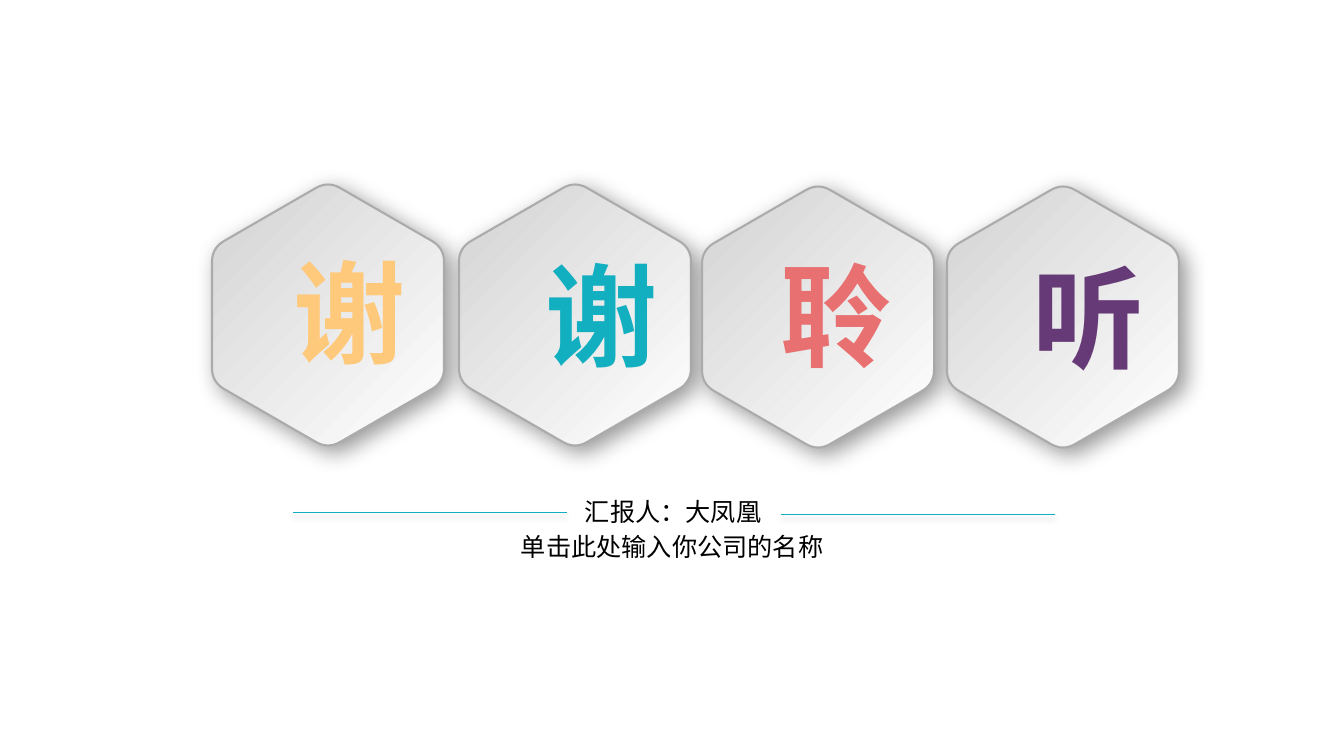
from math import cos, radians, sin

from lxml.etree import SubElement
from pptx import Presentation
from pptx.dml.color import RGBColor
from pptx.enum.shapes import MSO_CONNECTOR
from pptx.enum.text import MSO_AUTO_SIZE, PP_ALIGN
from pptx.oxml.ns import qn
from pptx.util import Pt

EMU_PER_PX = 914400 / 100.8
FONT = "Noto Sans CJK SC"
COLORS = {
    "white": "FFFFFF",
    "silver": "D3D3D3",
    "edge": "ABABAB",
    "black": "000000",
    "yellow": "FFC97B",
    "teal": "12AFC0",
    "coral": "E87071",
    "purple": "663A77",
}
HEXAGON_RADIUS = 134
CORNER_CUT = 14


def px(length):
    return round(length * EMU_PER_PX)


def color(name):
    return RGBColor.from_string(COLORS[name])


def add_shadow(shape, blur, distance, angle):
    effects = SubElement(shape._element.spPr, qn("a:effectLst"))
    shadow = SubElement(effects, qn("a:outerShdw"), blurRad=str(Pt(blur)),
                        dist=str(Pt(distance)), dir=str(angle * 60000),
                        algn="ctr", rotWithShape="0")
    tint = SubElement(shadow, qn("a:srgbClr"), val=COLORS["black"])
    SubElement(tint, qn("a:alpha"), val="40000")


def add_text(slide, box, text, size, color_name, bold=False, align=PP_ALIGN.LEFT):
    shape = slide.shapes.add_textbox(*map(px, box))
    frame = shape.text_frame
    frame.word_wrap = True
    frame.auto_size = MSO_AUTO_SIZE.SHAPE_TO_FIT_TEXT
    paragraph = frame.paragraphs[0]
    paragraph.alignment = align
    run = paragraph.add_run()
    run.text = text
    run.font.size = Pt(size)
    run.font.bold = bold
    run.font.name = FONT
    run.font.color.rgb = color(color_name)
    SubElement(run._r.get_or_add_rPr(), qn("a:ea"), typeface=FONT)


def corner_points(center_x, center_y):
    corners = [(center_x + HEXAGON_RADIUS * cos(radians(angle)),
                center_y + HEXAGON_RADIUS * sin(radians(angle)))
               for angle in range(0, 360, 60)]
    cut = CORNER_CUT / HEXAGON_RADIUS
    points = []
    for index, corner in enumerate(corners):
        entry, leave = [
            tuple(c + cut * (n - c) for c, n in zip(corner, neighbour))
            for neighbour in (corners[index - 1], corners[(index + 1) % 6])]
        apex = tuple((e + 2 * c + v) / 4 for e, c, v in zip(entry, corner, leave))
        points += [entry, apex, leave]
    return [(px(x), px(y)) for x, y in points]


def round_corners(shape):
    path = next(shape._element.iter(qn("a:path")))
    steps = list(path)
    for index in range(0, 18, 3):
        entry, apex, leave = [
            (int(step[0].get("x")), int(step[0].get("y")))
            for step in steps[index:index + 3]]
        control = [2 * a - (e + v) / 2 for e, a, v in zip(entry, apex, leave)]
        curve = SubElement(path, qn("a:cubicBezTo"))
        for end in (entry, leave):
            x, y = [round((e + 2 * c) / 3) for e, c in zip(end, control)]
            SubElement(curve, qn("a:pt"), x=str(x), y=str(y))
        SubElement(curve, qn("a:pt"), x=str(leave[0]), y=str(leave[1]))
        path.replace(steps[index + 1], curve)
        path.remove(steps[index + 2])


def add_hexagon(slide, center_x, center_y):
    start, *others = corner_points(center_x, center_y)
    builder = slide.shapes.build_freeform(*start)
    builder.add_line_segments(others, close=True)
    hexagon = builder.convert_to_shape()
    round_corners(hexagon)
    hexagon.rotation = 90
    hexagon.fill.gradient()
    hexagon.fill.gradient_angle = 225
    for stop, name in zip(hexagon.fill.gradient_stops, ("white", "silver")):
        stop.color.rgb = color(name)
    hexagon.line.color.rgb = color("edge")
    hexagon.line.width = Pt(1.5)
    add_shadow(hexagon, 16, 6, 45)


def add_thanks(slide):
    tiles = [
        ("谢", "yellow", 328, 315, (284, 239, 85, 154)),
        ("谢", "teal", 575, 315, (536, 242, 85, 154)),
        ("聆", "coral", 818, 317, (771, 242, 105, 154)),
        ("听", "purple", 1063, 317, (1023, 244, 85, 154)),
    ]
    for character, color_name, center_x, center_y, box in tiles:
        add_hexagon(slide, center_x, center_y)
        add_text(slide, box, character, 80, color_name, True, PP_ALIGN.CENTER)


def add_rule(slide, left, top, width):
    rule = slide.shapes.add_connector(
        MSO_CONNECTOR.STRAIGHT, px(left), px(top), px(left + width), px(top))
    rule.line.color.rgb = color("teal")
    rule.line.width = Pt(0.5)
    add_shadow(rule, 4, 3, 90)


def add_signature(slide, left, top):
    add_rule(slide, left, top + 21, 274)
    add_rule(slide, left + 488, top + 23, 274)
    add_text(slide, (left + 282, top, 199, 40), "汇报人：大凤凰", 18, "black")
    add_text(slide, (left + 218, top + 35, 326, 42),
             "单击此处输入你公司的名称", 18, "black")


def main():
    presentation = Presentation()
    presentation.slide_width = px(1344)
    presentation.slide_height = px(756)
    slide = presentation.slides.add_slide(presentation.slide_layouts[6])
    add_thanks(slide)
    add_signature(slide, 293, 491)
    presentation.save("out.pptx")


if __name__ == "__main__":
    main()
